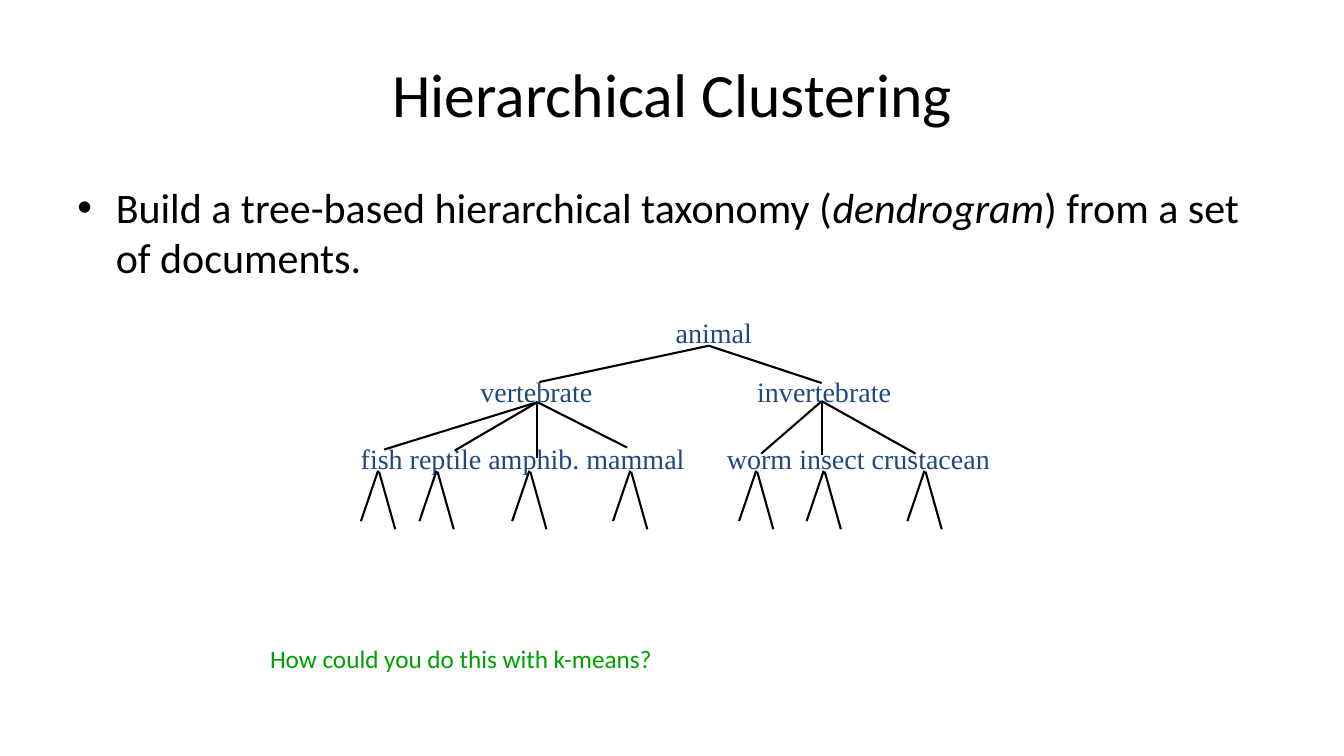
from lxml.etree import SubElement
from pptx import Presentation
from pptx.dml.color import RGBColor
from pptx.enum.shapes import MSO_CONNECTOR
from pptx.enum.text import MSO_ANCHOR, PP_ALIGN
from pptx.oxml.ns import qn
from pptx.util import Inches, Pt

BLACK = RGBColor(0x00, 0x00, 0x00)
NAVY = RGBColor(0x1F, 0x49, 0x7D)
GREEN = RGBColor(0x00, 0xA0, 0x00)

LABELS = [
    ("animal", 2.83, 0.08, 1.5),
    ("vertebrate", 1.16, 0.67, 1.32),
    ("invertebrate", 3.91, 0.67, 1.53),
    ("fish reptile amphib. mammal", -0.03, 1.33, 3.43),
    ("worm insect crustacean", 3.61, 1.33, 2.81),
]
BRANCHES = [
    ((3.53, 0.43), [(1.85, 0.79), (4.65, 0.8)]),
    ((1.83, 0.99), [(0.31, 1.46), (1.01, 1.47), (1.83, 1.54), (2.72, 1.44)]),
    ((4.65, 0.98), [(4.05, 1.5), (4.65, 1.51), (5.58, 1.5)]),
]
LEAF_XS = [0.25, 0.83, 1.75, 2.75, 4, 4.67, 5.67]
LEAF_Y = 1.67


def add_text(shapes, runs, left, top, width, height, size, color,
             font="Calibri", align=PP_ALIGN.LEFT, anchor=MSO_ANCHOR.TOP, wrap=True):
    sp = shapes.add_textbox(Inches(left), Inches(top), Inches(width), Inches(height))
    tf = sp.text_frame
    tf.word_wrap = wrap
    tf.vertical_anchor = anchor
    p = tf.paragraphs[0]
    p.alignment = align
    p.font.name = font
    p.font.size = Pt(size)
    p.font.color.rgb = color
    for text, italic in runs:
        r = p.add_run()
        r.text = text
        if italic:
            r.font.italic = True
    return p


def add_line(shapes, x1, y1, x2, y2):
    line = shapes.add_connector(MSO_CONNECTOR.STRAIGHT, Inches(x1), Inches(y1),
                                Inches(x2), Inches(y2))
    line.line.color.rgb = BLACK
    line.line.width = Pt(1.5)
    SubElement(line._element.spPr, qn("a:effectLst"))


def add_title(slide, left, top, width, height):
    add_text(slide.shapes, [("Hierarchical Clustering", False)], left, top, width, height,
             44, BLACK, align=PP_ALIGN.CENTER, anchor=MSO_ANCHOR.MIDDLE)


def add_body(slide, left, top, width, height):
    runs = [("Build a tree-based hierarchical taxonomy (", False), ("dendrogram", True),
            (") from a set of documents.", False)]
    p = add_text(slide.shapes, runs, left, top, width, height, 30, BLACK)
    pPr = p._p.get_or_add_pPr()
    pPr.set("marL", str(Inches(0.38)))
    pPr.set("indent", str(Inches(-0.38)))
    bullet_font = pPr.makeelement(qn("a:buFont"), {"typeface": "Arial"})
    bullet = pPr.makeelement(qn("a:buChar"), {"char": "•"})
    pPr.insert(0, bullet_font)
    pPr.insert(1, bullet)


def add_dendrogram(slide, left, top):
    shapes = slide.shapes.add_group_shape().shapes
    for text, x, y, width in LABELS:
        add_text(shapes, [(text, False)], left + x, top + y, width, 0.44, 20, NAVY,
                 font="Times New Roman", align=PP_ALIGN.CENTER, wrap=False)
    for (x, y), children in BRANCHES:
        for child_x, child_y in children:
            add_line(shapes, left + x, top + y, left + child_x, top + child_y)
    for leaf_x in LEAF_XS:
        x, y = left + leaf_x, top + LEAF_Y
        add_line(shapes, x, y, x - 0.17, y + 0.5)
        add_line(shapes, x + 0.01, y + 0.01, x + 0.17, y + 0.58)


def add_question(slide, left, top, width, height):
    add_text(slide.shapes, [("How could you do this with k-means?", False)],
             left, top, width, height, 18, GREEN)


def main():
    prs = Presentation()
    prs.slide_width, prs.slide_height = Inches(13.33), Inches(7.5)
    s = prs.slides.add_slide(prs.slide_layouts[6])
    add_title(s, 0.67, 0.3, 12, 1.25)
    add_body(s, 0.67, 1.75, 12, 4.95)
    add_dendrogram(s, 3.5, 3)
    add_question(s, 2.58, 6.33, 7, 0.4)
    prs.save("out.pptx")


if __name__ == "__main__":
    main()
